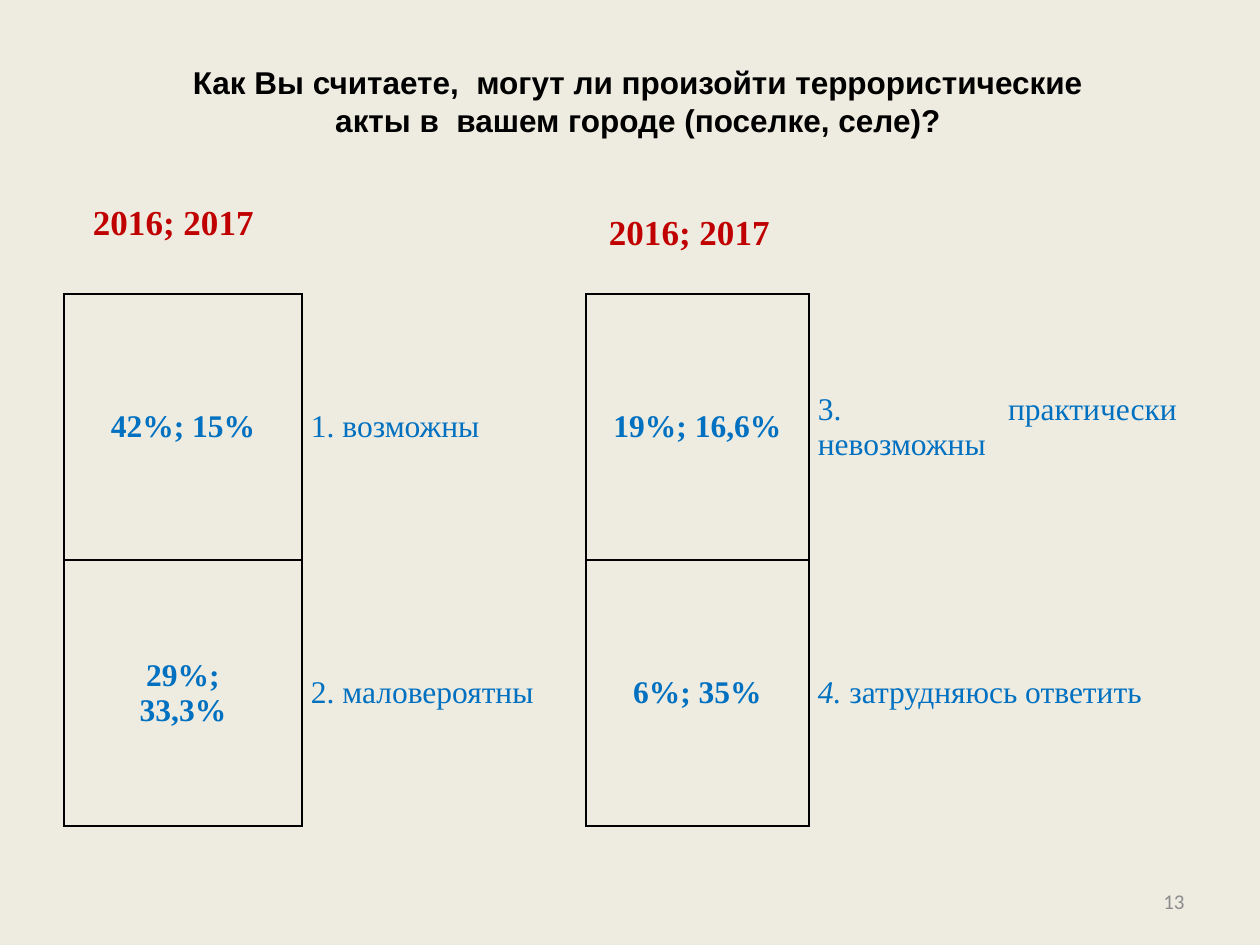
from typing import NamedTuple

from lxml.etree import SubElement
from pptx import Presentation
from pptx.dml.color import RGBColor
from pptx.enum.text import MSO_ANCHOR, MSO_AUTO_SIZE, PP_ALIGN
from pptx.oxml.ns import qn
from pptx.util import Emu, Pt

BLACK = RGBColor(0x00, 0x00, 0x00)
BLUE = RGBColor(0x00, 0x70, 0xC0)
RED = RGBColor(0xC0, 0x00, 0x00)
GREY = RGBColor(0x8C, 0x8C, 0x8C)
CREAM = RGBColor(0xEE, 0xEC, 0xE1)
SERIF = "Times New Roman"


class Box(NamedTuple):
    left: int
    top: int
    width: int
    height: int


class Style(NamedTuple):
    font: str
    size: int
    color: RGBColor
    bold: bool
    align: PP_ALIGN


class Entry(NamedTuple):
    text: str
    style: Style
    edges: str = ""
    anchor: MSO_ANCHOR = MSO_ANCHOR.MIDDLE
    lead: str = ""


HEAD = Style("Arial", 18, BLACK, True, PP_ALIGN.CENTER)
YEARS = Style(SERIF, 20, RED, True, PP_ALIGN.JUSTIFY)
SHARE = Style(SERIF, 18, BLUE, True, PP_ALIGN.CENTER)
ANSWER = Style(SERIF, 18, BLUE, False, PP_ALIGN.JUSTIFY)
PAGE = Style("Calibri", 12, GREY, False, PP_ALIGN.RIGHT)


def px(count: int) -> Emu:
    return Emu(round(count * 914400 / 126))


def write(frame, text: str, style: Style, lead: str = "") -> None:
    """Fill a text frame, one paragraph a line, after an optional italic lead."""
    frame.text = text
    for para in frame.paragraphs:
        para.alignment = style.align
        font = para.font
        font.name, font.size, font.bold = style.font, Pt(style.size), style.bold
        font.color.rgb = style.color
    if lead:
        para = frame.paragraphs[0]
        para.runs[0].text = lead
        para.runs[0].font.italic = True
        para.add_run().text = text


def place(shape, box: Box) -> None:
    shape.left, shape.top, shape.width, shape.height = map(px, box)


def rule(cell, edges: str) -> None:
    """Draw the named edges (L, R, T, B) in black and hide the others."""
    props = cell._tc.get_or_add_tcPr()
    for edge in "LRTB":
        line = SubElement(props, qn(f"a:ln{edge}"), w=str(Pt(1)))
        if edge in edges:
            fill = SubElement(line, qn("a:solidFill"))
            SubElement(fill, qn("a:srgbClr"), val=str(BLACK))
        else:
            SubElement(line, qn("a:noFill"))


def grid(slide, left: int, top: int, cols: list[int], high: int,
         rows: list[list[Entry]]) -> None:
    frame = slide.shapes.add_table(
        len(rows), len(cols), px(left), px(top), px(sum(cols)), px(high * len(rows)))
    table = frame.table
    table.first_row = table.horz_banding = False
    for col, wide in zip(table.columns, cols):
        col.width = px(wide)
    for row, entries in zip(table.rows, rows):
        row.height = px(high)
        for cell, entry in zip(row.cells, entries):
            cell.margin_left = cell.margin_right = px(9)
            cell.margin_top = cell.margin_bottom = 0
            cell.vertical_anchor = entry.anchor
            write(cell.text_frame, entry.text, entry.style, entry.lead)
            rule(cell, entry.edges)
            cell.fill.background()


def main() -> None:
    deck = Presentation()
    deck.slide_width, deck.slide_height = px(1260), px(945)
    slide = deck.slides.add_slide(deck.slide_layouts[5])
    back = slide.background.fill
    back.solid()
    back.fore_color.rgb = CREAM

    title = slide.shapes.title
    place(title, Box(160, 56, 956, 90))
    frame = title.text_frame
    write(frame, "Как Вы считаете,  могут ли произойти террористические "
          "акты в  вашем городе (поселке, селе)?", HEAD)
    frame.word_wrap = True
    frame.auto_size = MSO_AUTO_SIZE.NONE
    frame.vertical_anchor = MSO_ANCHOR.MIDDLE

    grid(slide, 64, 294, [238, 284, 223, 377], 266, [
        [Entry("42%; 15%", SHARE, "LRTB"),
         Entry("1. возможны", ANSWER, "LR"),
         Entry("19%; 16,6%", SHARE, "LRTB"),
         Entry("3. практически невозможны", ANSWER, "L")],
        [Entry("29%;\n33,3%", SHARE, "LRTB"),
         Entry("2. маловероятны", ANSWER, "LR"),
         Entry("6%; 35%", SHARE, "LRTB"),
         Entry("затрудняюсь ответить", ANSWER, "L", lead="4. ")],
    ])
    for left, top in ((84, 204), (600, 214)):
        grid(slide, left, top, [222], 52,
             [[Entry("2016; 2017", YEARS, anchor=MSO_ANCHOR.TOP)]])

    page = slide.shapes.add_textbox(*map(px, Box(903, 876, 294, 50)))
    write(page.text_frame, "13", PAGE)
    page.text_frame.word_wrap = True
    page.text_frame.vertical_anchor = MSO_ANCHOR.MIDDLE

    deck.save("out.pptx")


if __name__ == "__main__":
    main()
